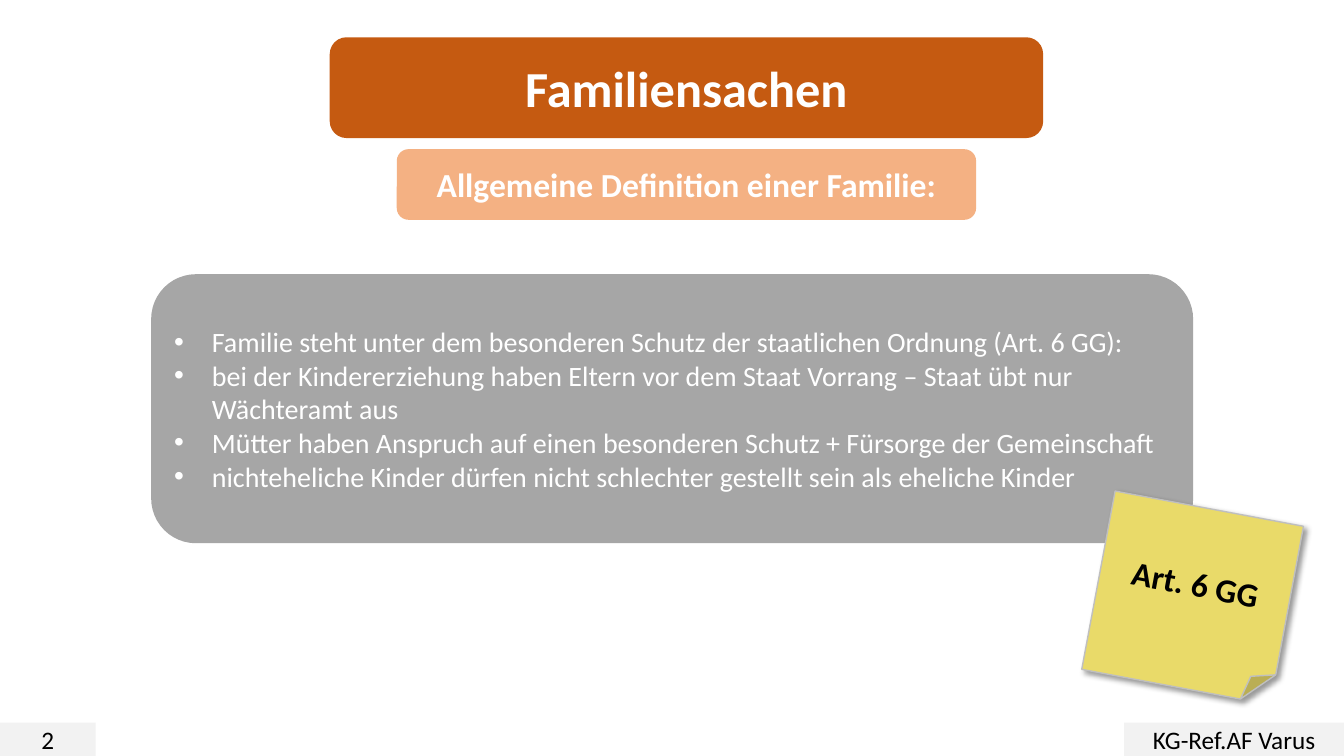
from dataclasses import dataclass

from lxml.etree import SubElement
from pptx import Presentation
from pptx.dml.color import RGBColor
from pptx.enum.shapes import MSO_SHAPE
from pptx.enum.text import MSO_ANCHOR, PP_ALIGN
from pptx.oxml.ns import qn
from pptx.util import Cm, Pt


@dataclass(frozen=True)
class Theme:
    font: str = "Calibri"
    title: str = "C55A11"
    sub: str = "F4B183"
    body: str = "A6A6A6"
    note: str = "E9DA69"
    edge: str = "BFBFBF"
    foot: str = "F2F2F2"
    light: str = "FFFFFF"
    dark: str = "000000"
    big: int = 36
    mid: int = 24
    item: int = 20
    small: int = 18


THEME = Theme()
WIDE, HIGH = 33.87, 19.05

ITEMS = [
    "Familie steht unter dem besonderen Schutz der staatlichen Ordnung (Art. 6 GG):",
    "bei der Kindererziehung haben Eltern vor dem Staat Vorrang – Staat übt nur Wächteramt aus",
    "Mütter haben Anspruch auf einen besonderen Schutz + Fürsorge der Gemeinschaft",
    "nichteheliche Kinder dürfen nicht schlechter gestellt sein als eheliche Kinder",
]


def add_box(slide, kind, box, fill):
    shape = slide.shapes.add_shape(kind, *[Cm(n) for n in box])
    shape.shadow.inherit = False
    shape.fill.solid()
    shape.fill.fore_color.rgb = RGBColor.from_string(fill)
    shape.line.fill.background()
    shape.text_frame.word_wrap = True
    shape.text_frame.vertical_anchor = MSO_ANCHOR.MIDDLE
    return shape


def add_text(para, text, size, color, bold=False, align=PP_ALIGN.CENTER):
    para.alignment = align
    run = para.add_run()
    run.text = text
    run.font.name = THEME.font
    run.font.size = Pt(size)
    run.font.bold = bold
    run.font.color.rgb = RGBColor.from_string(color)


def add_label(slide, kind, box, fill, text, size, color, bold=False):
    shape = add_box(slide, kind, box, fill)
    add_text(shape.text_frame.paragraphs[0], text, size, color, bold)
    return shape


def set_bullet(para):
    props = para._p.get_or_add_pPr()
    indent = Cm(0.95)
    props.set("marL", str(indent))
    props.set("indent", str(-indent))
    SubElement(props, qn("a:buFont"), typeface="Arial")
    SubElement(props, qn("a:buChar"), char="•")


def set_shadow(shape):
    list_ = shape._element.spPr.find(qn("a:effectLst"))
    outer = SubElement(list_, qn("a:outerShdw"), blurRad=str(Pt(4)),
                       dist=str(Pt(3)), dir=str(45 * 60000),
                       algn="tl", rotWithShape="0")
    color = SubElement(outer, qn("a:srgbClr"), val=THEME.dark)
    SubElement(color, qn("a:alpha"), val="40000")


# Title with the narrower subtitle centred below it
def add_head(slide, left, top, width):
    kind = MSO_SHAPE.ROUNDED_RECTANGLE
    add_label(slide, kind, (left, top, width, 2.54), THEME.title,
              "Familiensachen", THEME.big, THEME.light, True)
    inner = 14.6
    add_label(slide, kind, (left + (width - inner) / 2, top + 2.82, inner, 1.78),
              THEME.sub, "Allgemeine Definition einer Familie:",
              THEME.mid, THEME.light, True)


# Grey panel with the bullet list
def add_body(slide, *box):
    frame = add_box(slide, MSO_SHAPE.ROUNDED_RECTANGLE, box, THEME.body).text_frame
    for i, text in enumerate(ITEMS):
        para = frame.add_paragraph() if i else frame.paragraphs[0]
        add_text(para, text, THEME.item, THEME.light, align=PP_ALIGN.LEFT)
        set_bullet(para)


# Tilted sticky note
def add_note(slide, *box):
    note = add_label(slide, MSO_SHAPE.FOLDED_CORNER, box, THEME.note,
                     "Art. 6 GG", THEME.mid, THEME.dark, True)
    note.rotation = 10.6
    note.line.color.rgb = RGBColor.from_string(THEME.edge)
    note.line.width = Pt(1)
    set_shadow(note)


# Page number at the left edge, course name at the right edge
def add_foot(slide, left, top, width, height):
    course = 5.54
    for start, span, text in [(left, 2.41, "2"),
                              (left + width - course, course, "KG-Ref.AF Varus")]:
        add_label(slide, MSO_SHAPE.RECTANGLE, (start, top, span, height),
                  THEME.foot, text, THEME.small, THEME.dark)


def main():
    deck = Presentation()
    deck.slide_width, deck.slide_height = Cm(WIDE), Cm(HIGH)
    slide = deck.slides.add_slide(deck.slide_layouts[6])
    add_head(slide, 8.31, 0.94, 17.98)
    add_body(slide, 3.81, 6.91, 26.26, 6.78)
    add_note(slide, 27.64, 12.78, 4.83, 4.57)
    add_foot(slide, 0, HIGH - 0.84, WIDE, 0.84)
    deck.save("out.pptx")


if __name__ == "__main__":
    main()
